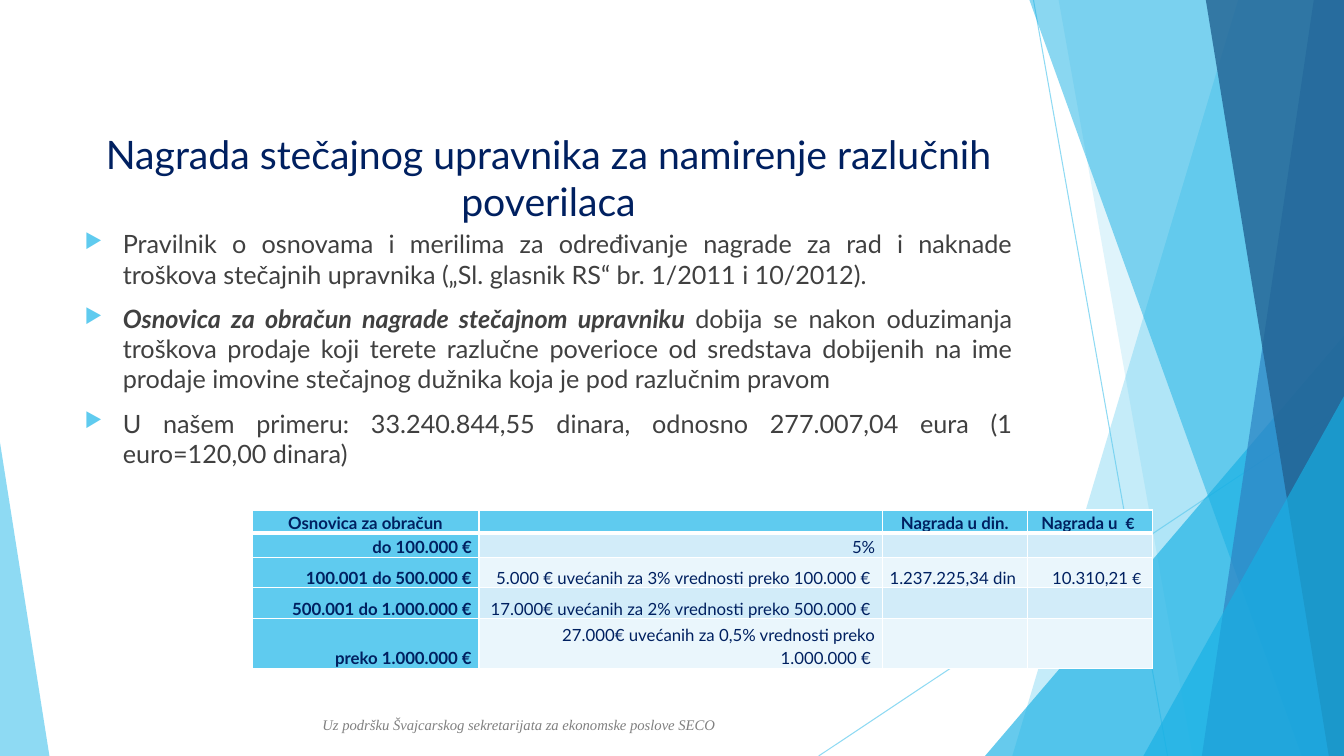
from lxml.etree import SubElement
from pptx import Presentation
from pptx.dml.color import RGBColor
from pptx.enum.shapes import MSO_CONNECTOR, MSO_SHAPE
from pptx.enum.text import MSO_ANCHOR, PP_ALIGN
from pptx.oxml.ns import qn
from pptx.util import Inches, Pt

WIDE, HIGH = 13.33, 7.5
SKY = RGBColor(0x5F, 0xCB, 0xEF)
CYAN = RGBColor(0x17, 0xB0, 0xE4)
BLUE = RGBColor(0x2E, 0x83, 0xC3)
DEEP = RGBColor(0x22, 0x62, 0x92)
NAVY = RGBColor(0x00, 0x20, 0x60)
DARK = RGBColor(0x40, 0x40, 0x40)
GRAY = RGBColor(0x80, 0x80, 0x80)
BANDS = RGBColor(0xEA, 0xF6, 0xFC), RGBColor(0xD2, 0xEC, 0xF9)

TITLE = "Nagrada stečajnog upravnika za namirenje razlučnih poverilaca"
FOOTER = "Uz podršku Švajcarskog sekretarijata za ekonomske poslove SECO"
# Each point is a list of (text, strong) runs.
POINTS = [
    [("Pravilnik o osnovama i merilima za određivanje nagrade za rad i naknade "
      "troškova stečajnih upravnika („Sl. glasnik RS“ br. 1/2011 i 10/2012). ", False)],
    [("Osnovica za obračun nagrade stečajnom upravniku ", True),
     ("dobija se nakon oduzimanja troškova prodaje koji terete razlučne poverioce od "
      "sredstava dobijenih na ime prodaje imovine stečajnog dužnika koja je pod "
      "razlučnim pravom ", False)],
    [("U našem primeru: 33.240.844,55 dinara, odnosno 277.007,04 eura "
      "(1 euro=120,00 dinara) ", False)],
]
# Each cell is a list of (text, size) runs.
ROWS = [
    [[("Osnovica za obračun", 12)], [], [("Nagrada u din.", 12)],
     [("Nagrada u ", 12), (" € ", 11)]],
    [[("do 100.000 €", 12)], [("5%", 12)], [], []],
    [[("100.001 do 500.000 €", 12)],
     [("5.000 € uvećanih za 3% vrednosti preko 100.000 € ", 12)],
     [("1.237.225,34 din ", 12)], [("10.310,21 ", 12), ("€ ", 11)]],
    [[("500.001 do 1.000.000 €", 12)],
     [("17.000€ uvećanih za 2% vrednosti preko 500.000 € ", 12)], [], []],
    [[("preko 1.000.000 €", 12)],
     [("27.000€ uvećanih za 0,5% vrednosti preko 1.000.000 € ", 12)], [], []],
]
COLS = [2.25, 4, 1.44, 1.24]
TALL = [0.2, 0.24, 0.3, 0.31, 0.49]


def fade(part, share):
    """Set the opacity, in percent, of the colour inside an XML part."""
    color = next(part.iter(qn("a:srgbClr")))
    SubElement(color, qn("a:alpha"), val=str(share * 1000))


def paint(shape, color, share):
    shape.shadow.inherit = False
    shape.fill.solid()
    shape.fill.fore_color.rgb = color
    shape.line.fill.background()
    fade(shape._element.spPr, share)


def draw_line(slide, start, end):
    line = slide.shapes.add_connector(
        MSO_CONNECTOR.STRAIGHT, *[Inches(n) for n in start + end])
    line.line.color.rgb = SKY
    line.line.width = Pt(0.75)
    fade(line._element.spPr, 70)
    SubElement(line._element.spPr, qn("a:effectLst"))


def draw_facet(slide, top, foot, color, share):
    """Fill from a slanted edge, top to foot, out to the right side."""
    pen = slide.shapes.build_freeform(Inches(top), 0, scale=1.0)
    ends = [(WIDE, 0), (WIDE, HIGH), (foot, HIGH)]
    pen.add_line_segments([(Inches(x), Inches(y)) for x, y in ends], close=True)
    paint(pen.convert_to_shape(), color, share)


def draw_wedge(slide, left, top, width, tip, color, share):
    """Stand a triangle on the bottom edge; tip is 0 for left, 1 for right."""
    wedge = slide.shapes.add_shape(
        MSO_SHAPE.ISOSCELES_TRIANGLE, Inches(left), Inches(top),
        Inches(width), Inches(HIGH - top))
    wedge.adjustments[0] = tip
    paint(wedge, color, share)


def draw_decor(slide):
    draw_line(slide, (10.25, 0), (11.58, HIGH))
    draw_line(slide, (WIDE, 4.03), (8.12, HIGH))
    draw_facet(slide, 12.28, 10.04, SKY, 36)
    draw_facet(slide, 10.5, 11.83, SKY, 20)
    draw_wedge(slide, 9.77, 3.33, 3.56, 1, CYAN, 66)
    draw_facet(slide, 10.21, 12.91, CYAN, 50)
    draw_facet(slide, 13.03, 11.92, BLUE, 70)
    draw_facet(slide, 11.96, 13.18, DEEP, 80)
    draw_wedge(slide, 11.34, 3.93, 1.99, 1, CYAN, 66)
    draw_wedge(slide, 0, 4.39, 0.49, 0, SKY, 70)


def add_frame(slide, box):
    frame = slide.shapes.add_textbox(*[Inches(n) for n in box]).text_frame
    frame.word_wrap = True
    return frame


def add_run(para, text, size, color, bold=False, slant=False, face="Lato"):
    run = para.add_run()
    run.text = text
    font = run.font
    font.name, font.size, font.bold, font.italic = face, Pt(size), bold, slant
    font.color.rgb = color


def add_bullet(para):
    props = para._p.get_or_add_pPr()
    props.set("marL", str(Inches(0.38)))
    props.set("indent", str(-Inches(0.38)))
    tint = SubElement(props, qn("a:buClr"))
    SubElement(tint, qn("a:srgbClr"), val=str(SKY))
    SubElement(props, qn("a:buSzPct"), val="80000")
    SubElement(props, qn("a:buChar"), char="▶")


def add_title(slide, box):
    para = add_frame(slide, box).paragraphs[0]
    para.alignment = PP_ALIGN.CENTER
    add_run(para, TITLE, 28, NAVY)


def add_points(slide, box):
    frame = add_frame(slide, box)
    for i, point in enumerate(POINTS):
        para = frame.add_paragraph() if i else frame.paragraphs[0]
        add_bullet(para)
        para.alignment = PP_ALIGN.JUSTIFY
        if i:
            para.space_before = Pt(10)
        for text, strong in point:
            add_run(para, text, 18, DARK, strong, strong)


def add_footer(slide, box):
    para = add_frame(slide, box).paragraphs[0]
    add_run(para, FOOTER, 10.5, GRAY, slant=True, face="Times New Roman")


def edge_cell(cell, row):
    """Rule the cell in white, heavier between head and body."""
    props = cell._tc.get_or_add_tcPr()
    heavy = {0: "lnB", 1: "lnT"}.get(row)
    for side in ("lnL", "lnR", "lnT", "lnB"):
        width = Pt(3 if side == heavy else 1)
        edge = SubElement(props, qn("a:" + side), w=str(width))
        fill = SubElement(edge, qn("a:solidFill"))
        SubElement(fill, qn("a:srgbClr"), val="FFFFFF")


def fill_cell(cell, row, col, runs):
    head = row == 0 or col == 0
    edge_cell(cell, row)
    cell.fill.solid()
    cell.fill.fore_color.rgb = SKY if head else BANDS[row % 2]
    cell.margin_left = cell.margin_right = Inches(0.07)
    cell.margin_top = cell.margin_bottom = 0
    last = (row, col) == (0, len(COLS) - 1)
    cell.vertical_anchor = MSO_ANCHOR.TOP if last else MSO_ANCHOR.BOTTOM
    para = cell.text_frame.paragraphs[0]
    para.alignment = PP_ALIGN.RIGHT if row else PP_ALIGN.CENTER
    para.line_spacing = 1.15
    for text, size in runs:
        add_run(para, text, size, NAVY, head)
    if not runs:
        SubElement(para._p, qn("a:endParaRPr"), sz="1000")


def add_rates(slide, left, top):
    grid = slide.shapes.add_table(
        len(ROWS), len(COLS), Inches(left), Inches(top),
        Inches(sum(COLS)), Inches(sum(TALL))).table
    grid.horz_banding = False
    for col, width in zip(grid.columns, COLS):
        col.width = Inches(width)
    for r, cells in enumerate(ROWS):
        grid.rows[r].height = Inches(TALL[r])
        for c, runs in enumerate(cells):
            fill_cell(grid.cell(r, c), r, c, runs)


def main():
    deck = Presentation()
    deck.slide_width, deck.slide_height = Inches(WIDE), Inches(HIGH)
    slide = deck.slides.add_slide(deck.slide_layouts[6])
    draw_decor(slide)
    add_footer(slide, (3.1, 7.05, 4.39, 0.28))
    add_title(slide, (0.74, 1.24, 9.4, 1))
    add_points(slide, (0.74, 2.22, 9.4, 5.09))
    add_rates(slide, 2.5, 5.06)
    deck.save("out.pptx")


if __name__ == "__main__":
    main()
